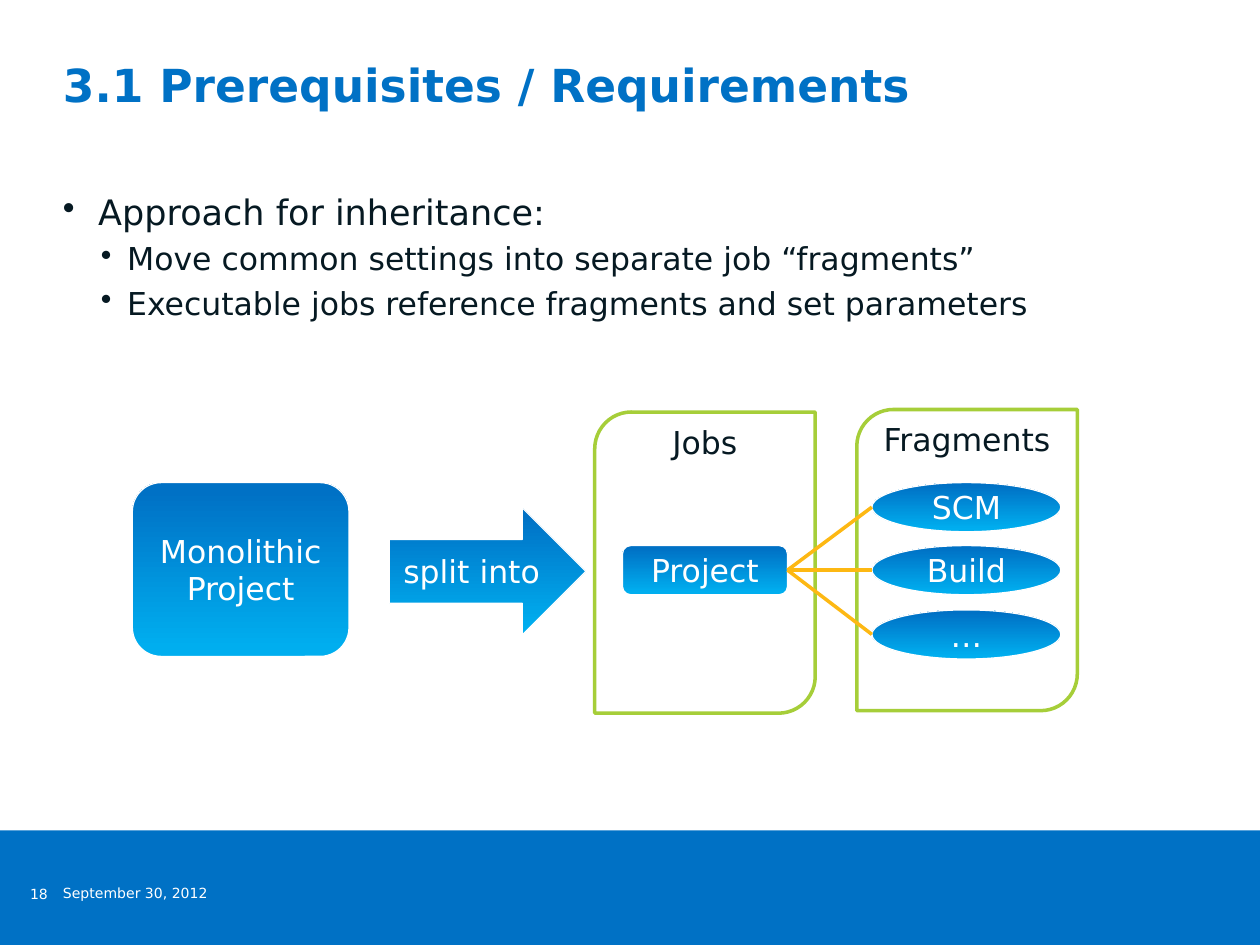
from dataclasses import dataclass

import pptx
import pptx.dml.color
import pptx.enum.shapes
import pptx.enum.text
import pptx.oxml
import pptx.oxml.ns
import pptx.util

Inches = pptx.util.Inches
Pt = pptx.util.Pt
Shape = pptx.enum.shapes.MSO_SHAPE
Align = pptx.enum.text.PP_ALIGN
Anchor = pptx.enum.text.MSO_ANCHOR

FONT = "DejaVu Sans"
BLUE, CYAN, GREEN, AMBER = "0071C5", "00AEEF", "A6CE39", "FDB813"
DARK, WHITE = "061922", "FFFFFF"


@dataclass
class Box:
    """A labelled shape, measured in inches."""
    kind: Shape
    left: float
    top: float
    width: float
    height: float
    label: str = ""


@dataclass
class Bullet:
    text: str
    size: float
    level: int
    indent: float
    hanging: float
    before: float


def rgb(color: str):
    return pptx.dml.color.RGBColor.from_string(color)


def add_xml(parent, tag: str, attrs: str = "") -> None:
    ns = pptx.oxml.ns.nsdecls("a")
    parent.append(pptx.oxml.parse_xml(f"<a:{tag} {ns} {attrs}/>"))


def write(tf, text: str, *, size: float, color: str, bold: bool = False,
          align=Align.LEFT, anchor=Anchor.TOP, wrap: bool = True) -> None:
    """Fill a text frame with one paragraph per line of text."""
    tf.margin_left = tf.margin_right = tf.margin_top = tf.margin_bottom = 0
    tf.word_wrap = wrap
    tf.vertical_anchor = anchor
    for i, line in enumerate(text.split("\n")):
        p = tf.add_paragraph() if i else tf.paragraphs[0]
        p.alignment = align
        r = p.add_run()
        r.text = line
        r.font.name, r.font.size, r.font.bold = FONT, Pt(size), bold
        r.font.color.rgb = rgb(color)


def add_text(s, left: float, top: float, width: float, height: float,
             text: str, **fmt):
    tf = s.shapes.add_textbox(Inches(left), Inches(top), Inches(width),
                              Inches(height)).text_frame
    write(tf, text, **fmt)
    return tf


def add_bullets(s, bullets: list[Bullet]) -> None:
    tf = add_text(s, 0.5, 1.55, 9, 4.96, "\n".join(b.text for b in bullets),
                  size=18, color=DARK)
    for p, b in zip(tf.paragraphs, bullets):
        p.level = b.level
        p.line_spacing = 0.9
        p.space_before = Pt(b.before)
        pPr = p._p.get_or_add_pPr()
        pPr.set("marL", str(Inches(b.indent)))
        pPr.set("indent", str(-Inches(b.hanging)))
        add_xml(pPr, "buChar", 'char="•"')
        p.runs[0].font.size = Pt(b.size)


def add_shape(s, box: Box):
    sp = s.shapes.add_shape(box.kind, Inches(box.left), Inches(box.top),
                            Inches(box.width), Inches(box.height))
    sp.shadow.inherit = False
    return sp


def add_panel(s, box: Box) -> None:
    sp = add_shape(s, box)
    sp.fill.solid()
    sp.fill.fore_color.rgb = rgb(WHITE)
    sp.line.color.rgb = rgb(GREEN)
    sp.line.width = Pt(2)
    write(sp.text_frame, box.label, size=18, color=DARK, align=Align.CENTER)


def add_node(s, box: Box):
    """Draw a shape shaded from cyan at the bottom to blue at the top."""
    sp = add_shape(s, box)
    sp.fill.gradient()
    sp.fill.gradient_angle = 90
    for stop, position, color in zip(sp.fill.gradient_stops, (0.05, 0.95),
                                     (CYAN, BLUE)):
        stop.position = position
        stop.color.rgb = rgb(color)
    sp.line.color.rgb = rgb(WHITE)
    sp.line.width = Pt(0.75)
    write(sp.text_frame, box.label, size=18, color=WHITE,
          align=Align.CENTER, anchor=Anchor.MIDDLE)
    return sp


def add_link(s, start, end) -> None:
    """Join the right side of start to the left side of end."""
    line = s.shapes.add_connector(
        pptx.enum.shapes.MSO_CONNECTOR.STRAIGHT,
        start.left + start.width, start.top + start.height // 2,
        end.left, end.top + end.height // 2)
    line.line.color.rgb = rgb(AMBER)
    line.line.width = Pt(2)
    add_xml(line._element.spPr, "effectLst")


def main() -> None:
    prs = pptx.Presentation()
    prs.slide_width, prs.slide_height = Inches(10), Inches(7.5)
    s = prs.slides.add_slide(prs.slide_layouts[6])

    band = add_shape(s, Box(Shape.RECTANGLE, 0, 6.59, 10, 0.91))
    band.fill.solid()
    band.fill.fore_color.rgb = rgb(BLUE)
    band.line.fill.background()

    add_bullets(s, [
        Bullet("Approach for inheritance:", 20, 0, 0.28, 0.28, 0),
        Bullet("Move common settings into separate job “fragments”",
               18, 1, 0.51, 0.21, 6),
        Bullet("Executable jobs reference fragments and set parameters",
               18, 1, 0.51, 0.21, 6),
    ])
    add_text(s, 0.5, 0.45, 9, 0.97, "3.1 Prerequisites / Requirements",
             size=26, color=BLUE, bold=True)
    add_text(s, 0.5, 7.02, 1.47, 0.13, "September 30, 2012",
             size=8, color=WHITE)
    add_text(s, 0.19, 7.03, 0.19, 0.13, "18", size=8, color=WHITE,
             align=Align.RIGHT, wrap=False)

    add_panel(s, Box(Shape.ROUND_2_DIAG_RECTANGLE, 6.8, 3.25, 1.75, 2.39,
                     "Fragments"))
    add_panel(s, Box(Shape.ROUND_2_DIAG_RECTANGLE, 4.72, 3.27, 1.75, 2.39,
                     "Jobs"))
    add_node(s, Box(Shape.RIGHT_ARROW, 3.09, 4.03, 1.56, 1.01, "split into"))
    add_node(s, Box(Shape.ROUNDED_RECTANGLE, 1.05, 3.83, 1.72, 1.38,
                    "Monolithic\nProject"))
    project = add_node(s, Box(Shape.ROUNDED_RECTANGLE, 4.94, 4.33, 1.31, 0.39,
                              "Project"))
    fragments = [add_node(s, Box(Shape.OVAL, 6.92, top, 1.5, 0.39, label))
                 for top, label in ((3.83, "SCM"), (4.33, "Build"), (4.84, "…"))]
    for fragment in fragments:
        add_link(s, project, fragment)

    prs.save("out.pptx")


if __name__ == "__main__":
    main()
